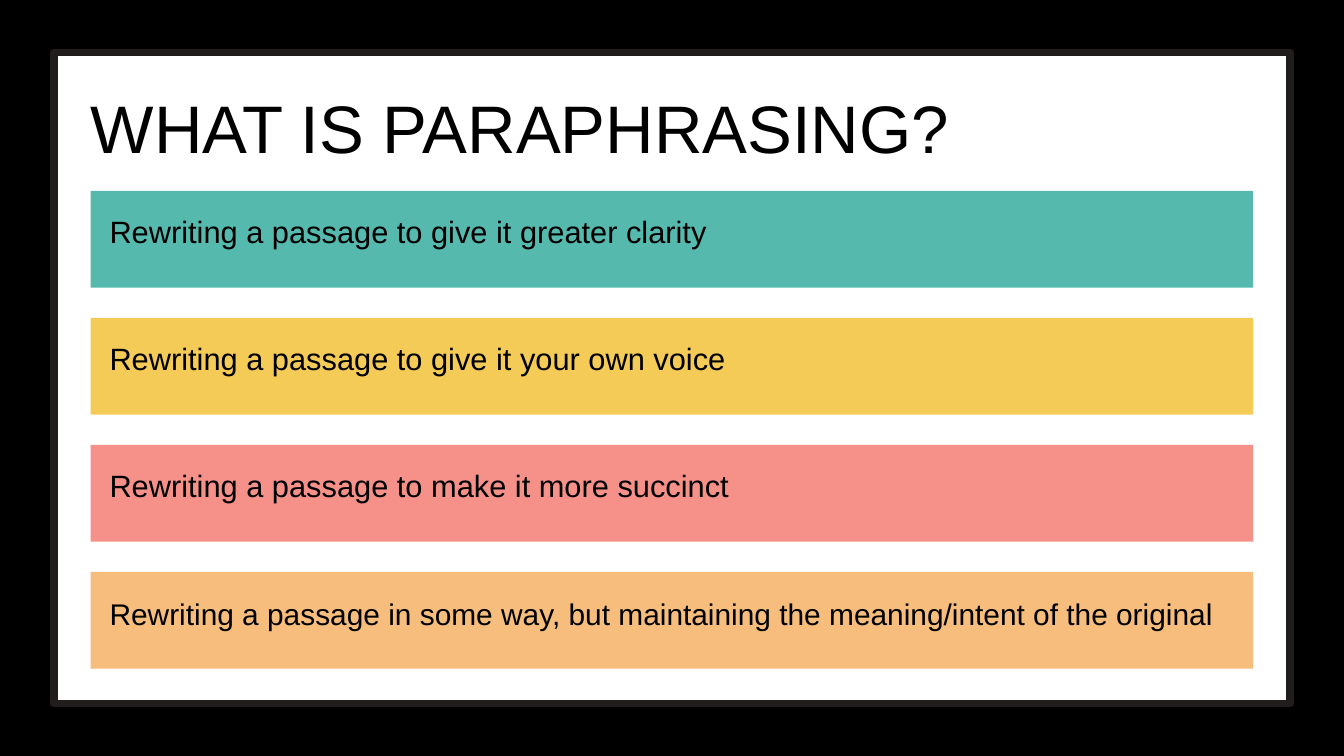
from pptx import Presentation
from pptx.dml.color import RGBColor
from pptx.enum.shapes import MSO_SHAPE
from pptx.enum.text import MSO_ANCHOR, MSO_AUTO_SIZE, PP_ALIGN
from pptx.util import Inches, Pt

RECTANGLE = MSO_SHAPE.RECTANGLE
LEFT = PP_ALIGN.LEFT
TOP, MIDDLE = MSO_ANCHOR.TOP, MSO_ANCHOR.MIDDLE

TITLE = "WHAT IS PARAPHRASING?"
# text, bar colour, font size, how far the text box rises above the bar
BARS = [
    ("Rewriting a passage to give it greater clarity", "teal", 33, 0.32),
    ("Rewriting a passage to give it your own voice", "yellow", 33, 0.32),
    ("Rewriting a passage to make it more succinct", "pink", 33, 0.32),
    ("Rewriting a passage in some way, but maintaining the meaning/intent of the original",
     "orange", 32, 0.28),
]
COLORS = {
    "black": "000000", "white": "FFFFFF", "frame": "211D1D",
    "teal": "56B9AE", "yellow": "F4CB56", "pink": "F69189", "orange": "F6BD7D",
}
FONT = "Arial"
LINE_SPACING = 1.4

SLIDE_WIDTH, SLIDE_HEIGHT = 20, 11.25
PANEL_LEFT, PANEL_TOP = 0.8, 0.78
CONTENT_LEFT = 1.35
CONTENT_WIDTH = SLIDE_WIDTH - 2 * CONTENT_LEFT
TITLE_TOP, TITLE_HEIGHT = 1.08, 1.32
BARS_TOP, BAR_HEIGHT, BAR_GAP = 2.84, 1.44, 0.45
TEXT_INSET = 0.28


def color(name):
    return RGBColor.from_string(COLORS[name])


def add_rectangle(shapes, left, top, width, height, fill):
    shape = shapes.add_shape(RECTANGLE, *map(Inches, (left, top, width, height)))
    shape.shadow.inherit = False
    shape.fill.solid()
    shape.fill.fore_color.rgb = color(fill)
    shape.line.fill.background()
    return shape


def write(shape, text, size, inset, anchor):
    frame = shape.text_frame
    frame.text = text
    frame.word_wrap = True
    frame.auto_size = MSO_AUTO_SIZE.NONE
    frame.vertical_anchor = anchor
    frame.margin_left = frame.margin_right = Inches(inset)
    frame.margin_top = frame.margin_bottom = Inches(inset)
    paragraph = frame.paragraphs[0]
    paragraph.alignment = LEFT
    paragraph.line_spacing = Pt(size * LINE_SPACING)
    font = paragraph.runs[0].font
    font.name, font.size = FONT, Pt(size)
    font.color.rgb = color("black")


def main():
    presentation = Presentation()
    presentation.slide_width = Inches(SLIDE_WIDTH)
    presentation.slide_height = Inches(SLIDE_HEIGHT)
    slide = presentation.slides.add_slide(presentation.slide_layouts.get_by_name("Title Only"))
    slide.background.fill.solid()
    slide.background.fill.fore_color.rgb = color("black")

    panel = add_rectangle(slide.shapes, PANEL_LEFT, PANEL_TOP,
                          SLIDE_WIDTH - 2 * PANEL_LEFT,
                          SLIDE_HEIGHT - 2 * PANEL_TOP, "white")
    panel.line.color.rgb = color("frame")
    panel.line.width = Pt(8.25)

    for row, (text, fill, size, rise) in enumerate(BARS):
        top = BARS_TOP + row * (BAR_HEIGHT + BAR_GAP)
        group = slide.shapes.add_group_shape()
        add_rectangle(group.shapes, CONTENT_LEFT, top, CONTENT_WIDTH, BAR_HEIGHT, fill)
        label = group.shapes.add_textbox(
            *map(Inches, (CONTENT_LEFT, top - rise, CONTENT_WIDTH, BAR_HEIGHT + rise)))
        write(label, text, size, TEXT_INSET, MIDDLE)

    title = slide.shapes.title
    title.left, title.top = Inches(CONTENT_LEFT), Inches(TITLE_TOP)
    title.width, title.height = Inches(CONTENT_WIDTH), Inches(TITLE_HEIGHT)
    write(title, TITLE, 72, 0, TOP)
    # The placeholder starts at the back; bring it in front of the white panel.
    title.element.getparent().append(title.element)

    presentation.save("out.pptx")


if __name__ == "__main__":
    main()
